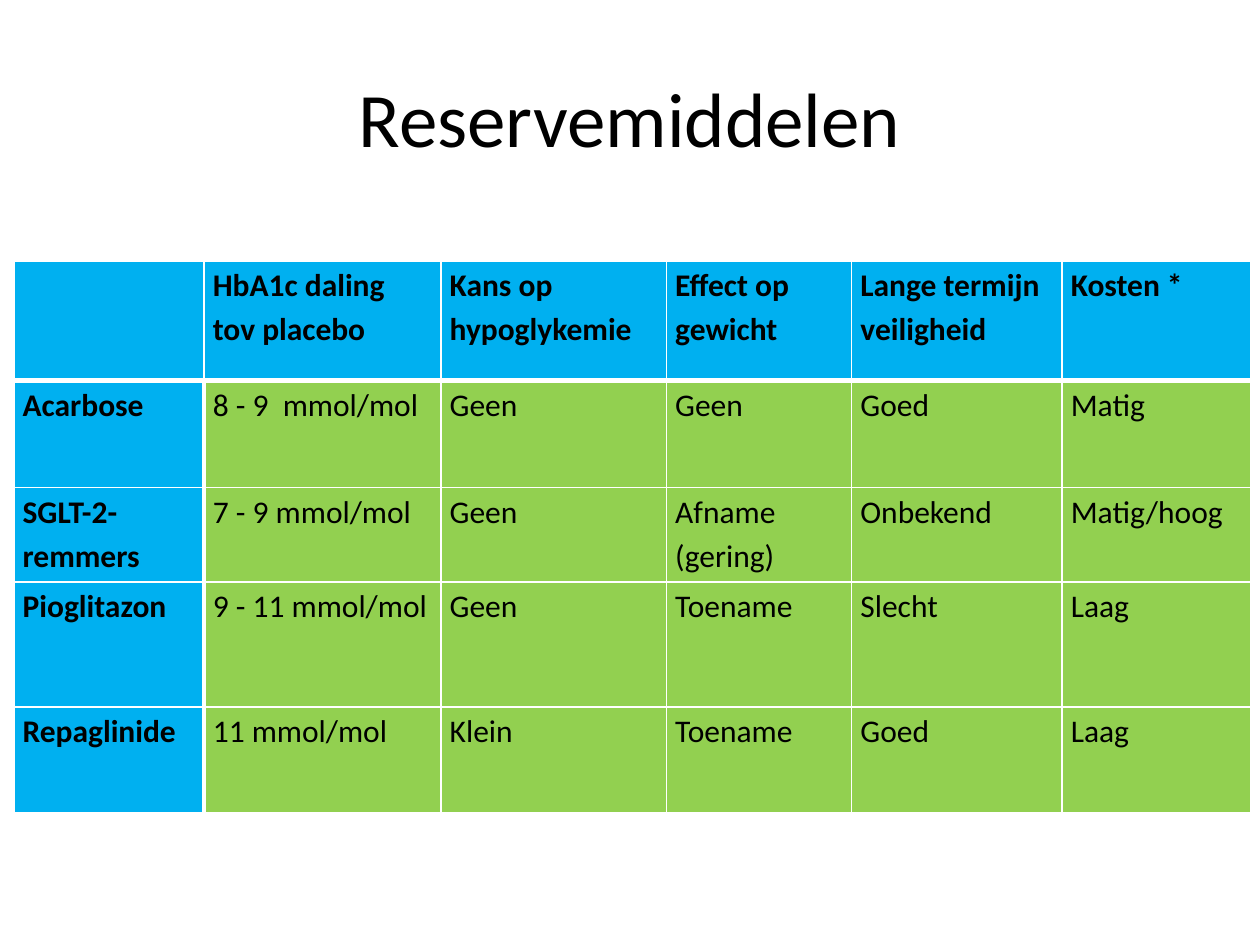
from lxml.etree import SubElement
from pptx import Presentation
from pptx.dml.color import RGBColor
from pptx.enum.text import MSO_ANCHOR as Anchor, PP_ALIGN as Align
from pptx.oxml.ns import qn
from pptx.util import Inches, Pt

COLORS = {"text": "000000", "header": "00B0F0", "body": "92D050", "border": "FFFFFF"}
FONT = "Calibri"
TITLE_ONLY = 5

COLUMN_WIDTHS = [1.51, 1.88, 1.79, 1.47, 1.67, 1.5]
ROW_HEIGHTS = [0.95, 0.85, 0.75, 0.99, 0.84]
ROWS = [
    ["", "HbA1c daling tov placebo", "Kans op hypoglykemie", "Effect op gewicht",
     "Lange termijn veiligheid", "Kosten *"],
    ["Acarbose", "8 - 9  mmol/mol", "Geen", "Geen", "Goed", "Matig"],
    ["SGLT-2-remmers", "7 - 9 mmol/mol", "Geen", "Afname (gering)", "Onbekend", "Matig/hoog"],
    ["Pioglitazon", "9 - 11 mmol/mol", "Geen", "Toename", "Slecht", "Laag"],
    ["Repaglinide", "11 mmol/mol", "Klein", "Toename", "Goed", "Laag"],
]


def write_text(frame, text, size=18, bold=False, align=Align.LEFT, spacing=None):
    paragraph = frame.paragraphs[0]
    paragraph.alignment = align
    paragraph.line_spacing = spacing
    font = paragraph.font
    if text:
        run = paragraph.add_run()
        run.text = text
        font = run.font
    font.name = FONT
    font.size = Pt(size)
    font.bold = bold
    font.color.rgb = RGBColor.from_string(COLORS["text"])


def set_borders(cell, **widths):
    """Draw the left, right, top and bottom edges with widths in points."""
    properties = cell._tc.get_or_add_tcPr()
    for side in ("L", "R", "T", "B"):
        line = SubElement(properties, qn(f"a:ln{side}"), w=str(Pt(widths.get(side, 1))))
        fill = SubElement(line, qn("a:solidFill"))
        SubElement(fill, qn("a:srgbClr"), val=COLORS["border"])


def format_cell(cell, text, row, column):
    is_header = row == 0 or column == 0
    # Thick rules separate the header row and the name column from the body
    thick = {
        "B": row == 0,
        "T": row == 1,
        "R": column == 0 and row > 0,
        "L": column == 1 and row > 0,
    }
    set_borders(cell, **{side: 3 for side, is_thick in thick.items() if is_thick})
    cell.fill.solid()
    cell.fill.fore_color.rgb = RGBColor.from_string(COLORS["header" if is_header else "body"])
    cell.margin_left = cell.margin_right = Inches(0.07)
    cell.margin_top = cell.margin_bottom = 0
    cell.vertical_anchor = Anchor.TOP
    write_text(cell.text_frame, text, bold=is_header, spacing=1.15)


def place_title(slide, left, top, width, height):
    title = slide.shapes.title
    title.left, title.top, title.width, title.height = left, top, width, height
    title.text_frame.vertical_anchor = Anchor.MIDDLE
    write_text(title.text_frame, "Reservemiddelen", size=44, align=Align.CENTER)


def place_drug_table(slide, left, top, width, height):
    table = slide.shapes.add_table(
        len(ROWS), len(COLUMN_WIDTHS), left, top, width, height).table
    for column, share in zip(table.columns, COLUMN_WIDTHS):
        column.width = int(width * share / sum(COLUMN_WIDTHS))
    for row, share in zip(table.rows, ROW_HEIGHTS):
        row.height = int(height * share / sum(ROW_HEIGHTS))
    for row, texts in enumerate(ROWS):
        for column, text in enumerate(texts):
            format_cell(table.cell(row, column), text, row, column)


def main():
    presentation = Presentation()
    presentation.slide_width = Inches(10)
    presentation.slide_height = Inches(7.5)
    slide = presentation.slides.add_slide(presentation.slide_layouts[TITLE_ONLY])

    # Title
    place_title(slide, Inches(0.5), Inches(0.3), Inches(9), Inches(1.25))
    # Comparison of the reserve drugs
    place_drug_table(slide, Inches(0.11), Inches(2.07), Inches(9.82), Inches(4.38))

    presentation.save("out.pptx")


if __name__ == "__main__":
    main()
